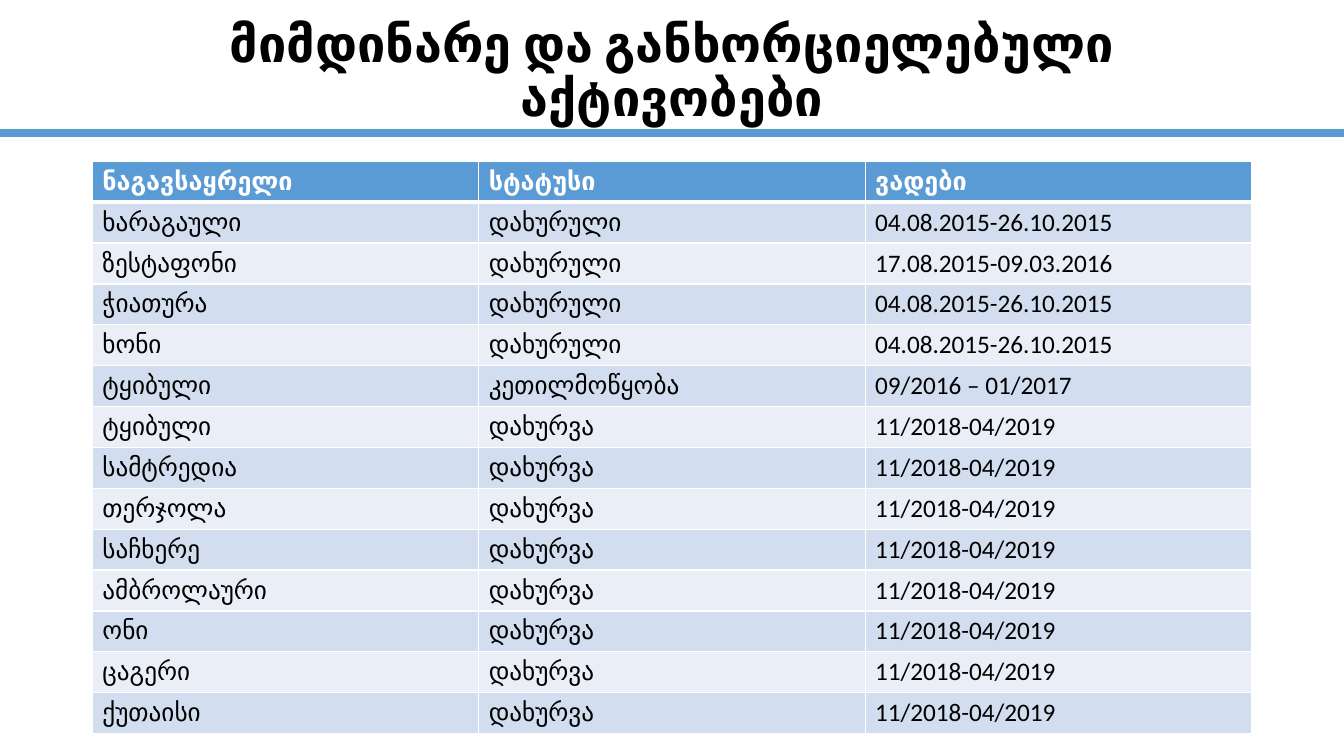
from dataclasses import dataclass

from lxml.etree import SubElement
from pptx import Presentation
from pptx.dml.color import RGBColor as Color
from pptx.enum.shapes import MSO_CONNECTOR as Connector
from pptx.enum.text import MSO_ANCHOR as Anchor, MSO_AUTO_SIZE as AutoSize, PP_ALIGN as Align
from pptx.oxml.ns import qn
from pptx.util import Pt

TITLE = "მიმდინარე და განხორციელებული აქტივობები"
HEADER = ("ნაგავსაყრელი", "სტატუსი", "ვადები")
CLOSED, CLOSING, UPGRADE = "დახურული", "დახურვა", "კეთილმოწყობა"
LANDFILLS = [
    ("ხარაგაული", CLOSED, "04.08.2015-26.10.2015"),
    ("ზესტაფონი", CLOSED, "17.08.2015-09.03.2016"),
    ("ჭიათურა", CLOSED, "04.08.2015-26.10.2015"),
    ("ხონი", CLOSED, "04.08.2015-26.10.2015"),
    ("ტყიბული", UPGRADE, "09/2016 – 01/2017"),
    ("ტყიბული", CLOSING, "11/2018-04/2019"),
    ("სამტრედია", CLOSING, "11/2018-04/2019"),
    ("თერჯოლა", CLOSING, "11/2018-04/2019"),
    ("საჩხერე", CLOSING, "11/2018-04/2019"),
    ("ამბროლაური", CLOSING, "11/2018-04/2019"),
    ("ონი", CLOSING, "11/2018-04/2019"),
    ("ცაგერი", CLOSING, "11/2018-04/2019"),
    ("ქუთაისი", CLOSING, "11/2018-04/2019"),
]


@dataclass(frozen=True)
class Theme:
    font: str = "Calibri"
    title_size: int = 36
    table_size: int = 18
    black: str = "000000"
    white: str = "FFFFFF"
    accent: str = "5B9BD5"
    bands: tuple = ("D2DEEF", "EAEFF7")


THEME = Theme()
SLIDE_W, SLIDE_H = 960, 540
MARGIN = 66
CONTENT_W = SLIDE_W - 2 * MARGIN
TITLE_H = 104.4
RULE_Y, RULE_WEIGHT = 95, 6
TABLE_TOP, ROW_H = 115.2, 29.2


def write(frame, text, size, color=THEME.black, bold=False, align=Align.LEFT, spacing=1.0):
    para = frame.paragraphs[0]
    para.alignment = align
    para.line_spacing = spacing
    span = para.add_run()
    span.text = text
    span.font.name = THEME.font
    span.font.size = Pt(size)
    span.font.bold = bold
    span.font.color.rgb = Color.from_string(color)


def add_borders(cell, bottom=1):
    """Draw white cell borders; call before the fill, which must follow them in the XML."""
    properties = cell._tc.get_or_add_tcPr()
    for side, weight in (("L", 1), ("R", 1), ("T", 1), ("B", bottom)):
        line = SubElement(properties, qn(f"a:ln{side}"), w=str(Pt(weight)))
        SubElement(SubElement(line, qn("a:solidFill")), qn("a:srgbClr"), val=THEME.white)


def add_title(page):
    title = page.shapes.title
    title.left, title.top = Pt(MARGIN), Pt(0)
    title.width, title.height = Pt(CONTENT_W), Pt(TITLE_H)
    frame = title.text_frame
    frame.word_wrap = True
    frame.auto_size = AutoSize.NONE
    frame.vertical_anchor = Anchor.MIDDLE
    write(frame, TITLE, THEME.title_size, bold=True, align=Align.CENTER, spacing=0.9)


def add_table(page):
    rows = [HEADER, *LANDFILLS]
    table = page.shapes.add_table(
        len(rows), len(HEADER), Pt(MARGIN), Pt(TABLE_TOP), Pt(CONTENT_W), Pt(ROW_H * len(rows))
    ).table
    for column in table.columns:
        column.width = Pt(CONTENT_W / len(HEADER))
    for r, values in enumerate(rows):
        table.rows[r].height = Pt(ROW_H)
        is_header = r == 0
        fill = THEME.accent if is_header else THEME.bands[(r - 1) % 2]
        color = THEME.white if is_header else THEME.black
        for c, text in enumerate(values):
            cell = table.cell(r, c)
            add_borders(cell, bottom=3 if is_header else 1)
            cell.fill.solid()
            cell.fill.fore_color.rgb = Color.from_string(fill)
            write(cell.text_frame, text, THEME.table_size, color=color, bold=is_header)


def add_rule(page):
    rule = page.shapes.add_connector(
        Connector.STRAIGHT, Pt(0), Pt(RULE_Y), Pt(SLIDE_W), Pt(RULE_Y)
    )
    rule.line.color.rgb = Color.from_string(THEME.accent)
    rule.line.width = Pt(RULE_WEIGHT)
    SubElement(rule._element.spPr, qn("a:effectLst"))


def main():
    deck = Presentation()
    deck.slide_width, deck.slide_height = Pt(SLIDE_W), Pt(SLIDE_H)
    page = deck.slides.add_slide(deck.slide_layouts.get_by_name("Title Only"))
    add_title(page)
    add_table(page)
    add_rule(page)
    deck.save("out.pptx")


if __name__ == "__main__":
    main()
